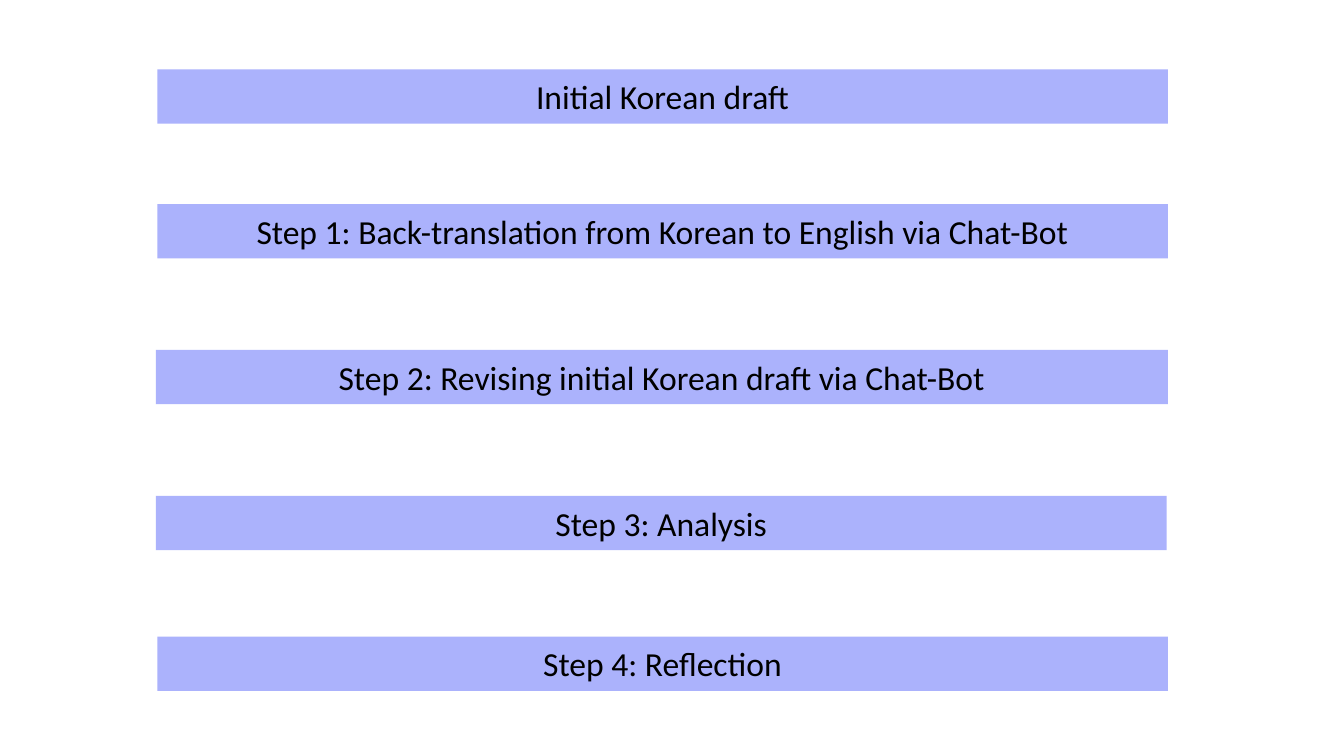
"""Build a slide of stacked bars showing the steps of a back-translation workflow."""

from dataclasses import dataclass

from pptx import Presentation
from pptx.dml.color import RGBColor
from pptx.enum.shapes import MSO_SHAPE
from pptx.enum.text import MSO_ANCHOR, MSO_AUTO_SIZE, PP_ALIGN
from pptx.slide import Slide
from pptx.util import Inches, Length, Pt

COLUMNS, ROWS = 100, 56.25
CELL = 0.1
BAR_LEFT, BAR_WIDTH, BAR_HEIGHT = 11.7, 75.2, 4.04


@dataclass(frozen=True)
class Theme:
    bar: RGBColor = RGBColor(0xAB, 0xB2, 0xFC)
    ink: RGBColor = RGBColor(0, 0, 0)
    font: str = "Calibri"
    size: Length = Pt(18)


@dataclass(frozen=True)
class Step:
    label: str
    row: float
    column: float = BAR_LEFT
    width: float = BAR_WIDTH


THEME = Theme()
FRAME_FORMAT = {
    "word_wrap": True,
    "auto_size": MSO_AUTO_SIZE.SHAPE_TO_FIT_TEXT,
    "vertical_anchor": MSO_ANCHOR.TOP,
}
FONT_FORMAT = {"name": THEME.font, "size": THEME.size}

STEPS = [
    Step("Initial Korean draft", 5.17),
    Step("Step 1: Back-translation from Korean to English via Chat-Bot", 15.2),
    Step("Step 2: Revising initial Korean draft via Chat-Bot", 26.04, 11.6, 75.3),
    Step("Step 3: Analysis", 36.9, 11.6),
    Step("Step 4: Reflection", 47.37),
]


def cells(count: float) -> Length:
    return Inches(count * CELL)


def apply_format(target: object, values: dict[str, object]) -> None:
    for name, value in values.items():
        setattr(target, name, value)


def draw_step(slide: Slide, step: Step) -> None:
    bar = slide.shapes.add_shape(
        MSO_SHAPE.RECTANGLE,
        cells(step.column), cells(step.row), cells(step.width), cells(BAR_HEIGHT),
    )
    bar.shadow.inherit = False
    bar.fill.solid()
    bar.fill.fore_color.rgb = THEME.bar
    bar.line.fill.background()

    apply_format(bar.text_frame, FRAME_FORMAT)
    paragraph = bar.text_frame.paragraphs[0]
    paragraph.alignment = PP_ALIGN.CENTER
    label = paragraph.add_run()
    label.text = step.label
    apply_format(label.font, FONT_FORMAT)
    label.font.color.rgb = THEME.ink


def main() -> None:
    deck = Presentation()
    deck.slide_width, deck.slide_height = cells(COLUMNS), cells(ROWS)
    slide = deck.slides.add_slide(deck.slide_layouts.get_by_name("Blank"))
    for step in STEPS:
        draw_step(slide, step)
    deck.save("out.pptx")


if __name__ == "__main__":
    main()
